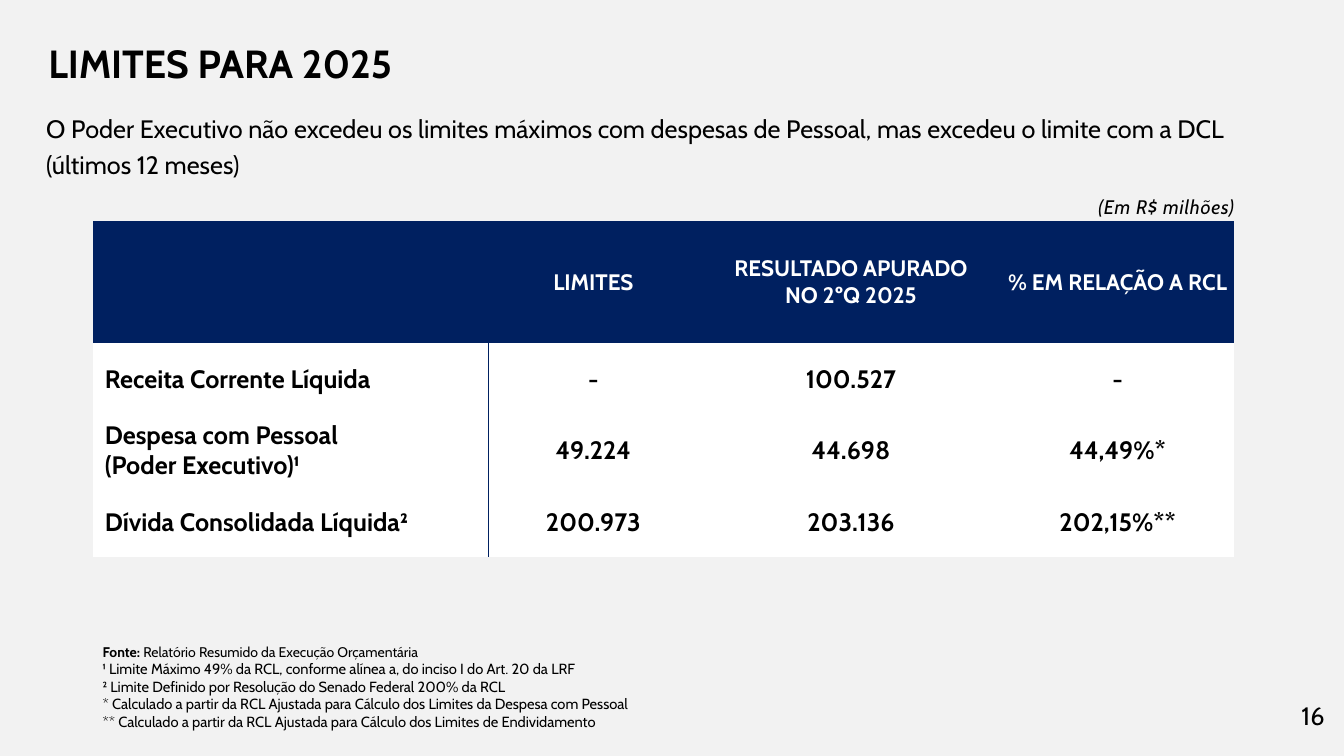
from pptx import Presentation, util as u
from pptx.dml.color import RGBColor
from pptx.enum import shapes, text
from pptx.oxml import parse_xml
from pptx.oxml.ns import nsdecls, qn

FONT = "Cabin"
BLACK, WHITE, NAVY, GREY = "000000", "FFFFFF", "002060", "F2F2F2"
LEFT, MID, RIGHT = text.PP_ALIGN.LEFT, text.PP_ALIGN.CENTER, text.PP_ALIGN.RIGHT
PLAIN = "{2D5ABB26-0587-4C30-8999-92F81FD0307C}"

COLS = [390, 213, 298, 231]
ROWS = [121, 71, 71, 71]
DATA = [
    ["", "LIMITES", "RESULTADO APURADO\nNO 2ºQ 2025", "% EM RELAÇÃO A RCL"],
    ["Receita Corrente Líquida", "-", "100.527", "-"],
    ["Despesa com Pessoal\n(Poder Executivo)¹", "49.224", "44.698", "44,49%*"],
    ["Dívida Consolidada Líquida²", "200.973", "203.136", "202,15%**"],
]
NOTES = [
    "¹ Limite Máximo 49% da RCL, conforme alínea a, do inciso I do Art. 20 da LRF",
    "² Limite Definido por Resolução do Senado Federal 200% da RCL",
    "* Calculado a partir da RCL Ajustada para Cálculo dos Limites da Despesa com Pessoal",
    "** Calculado a partir da RCL Ajustada para Cálculo dos Limites de Endividamento",
]


def px(n):
    """Turn px, 100 to the inch, into EMU."""
    return u.Emu(n * 9144)


def color(code):
    """Turn a hex string into a colour."""
    return RGBColor.from_string(code)


def style(para, size, tint=BLACK, bold=None, align=LEFT, lead=None):
    """Format one paragraph."""
    para.alignment = align
    para.line_spacing = lead
    font = para.font
    font.name, font.size, font.bold = FONT, u.Pt(size), bold
    font.color.rgb = color(tint)


def label(slide, box, words, size, anchor=text.MSO_ANCHOR.TOP, wrap=True, **look):
    """Add a text box and return its frame."""
    frame = slide.shapes.add_textbox(*map(px, box)).text_frame
    frame.word_wrap = wrap
    frame.vertical_anchor = anchor
    frame.text = words
    for para in frame.paragraphs:
        style(para, size, **look)
    return frame


def header(slide, box):
    """Place the title and the summary below it."""
    x, y, w, h = box
    title = slide.shapes.title
    title.left, title.top, title.width, title.height = map(px, (x + 2, y, 785, 79))
    frame = title.text_frame
    frame.text = "LIMITES PARA 2025"
    frame.vertical_anchor = text.MSO_ANCHOR.MIDDLE
    style(frame.paragraphs[0], 28, bold=True, lead=0.9)
    label(slide, (x, y + 87, w, h - 87),
          "O Poder Executivo não excedeu os limites máximos com despesas de "
          "Pessoal, mas excedeu o limite com a DCL (últimos 12 meses)",
          18, text.MSO_ANCHOR.MIDDLE, lead=1.2)


def limits(slide, box):
    """Place the table of limits, its unit and its dividing line."""
    x, y, w, h = box
    grid = slide.shapes.add_table(len(ROWS), len(COLS), *map(px, box)).table
    grid._tbl.tblPr.find(qn("a:tableStyleId")).text = PLAIN
    for col, size in zip(grid.columns, COLS):
        col.width = px(size)
    for row, size in zip(grid.rows, ROWS):
        row.height = px(size)
    for r, line in enumerate(DATA):
        for c, words in enumerate(line):
            cell = grid.cell(r, c)
            cell.fill.solid()
            cell.fill.fore_color.rgb = color(WHITE if r else NAVY)
            cell.vertical_anchor = text.MSO_ANCHOR.MIDDLE
            cell.margin_left = px(1 if c else 12)
            cell.margin_right = cell.margin_top = px(1)
            cell.margin_bottom = 0
            cell.text = words
            for para in cell.text_frame.paragraphs:
                style(para, 18 if r else 16, BLACK if r else WHITE, True,
                      MID if c else LEFT)
    unit = label(slide, (x + w - 199, y - 35, 209, 42), "(Em R$ milhões)",
                 14, align=RIGHT, lead=1.2)
    unit.paragraphs[0].font.italic = True
    unit.paragraphs[0].runs[0]._r.get_or_add_rPr().set("spc", "50")
    edge = x + COLS[0] + 2
    rule = slide.shapes.add_connector(
        shapes.MSO_CONNECTOR.STRAIGHT,
        *map(px, (edge, y + ROWS[0] - 8, edge, y + h)))
    rule.line.color.rgb = color(NAVY)
    rule.line.width = u.Pt(0.5)
    rule._element.spPr.append(parse_xml(f"<a:effectLst {nsdecls('a')}/>"))


def notes(slide, box):
    """Place the source and the footnotes."""
    frame = label(slide, box, "\n".join(["", *NOTES]), 10.5)
    first = frame.paragraphs[0]
    style(first, 10)
    first.add_run().text = "Fonte: "
    first.runs[0].font.bold = True
    first.add_run().text = "Relatório Resumido da Execução Orçamentária"


def main():
    """Build the slide and save it."""
    deck = Presentation()
    deck.slide_width, deck.slide_height = px(1333), px(750)
    slide = deck.slides.add_slide(deck.slide_layouts[5])
    slide.background.fill.solid()
    slide.background.fill.fore_color.rgb = color(GREY)
    header(slide, (36, 26, 1260, 146))
    limits(slide, (92, 219, sum(COLS), sum(ROWS)))
    notes(slide, (92, 633, 774, 98))
    label(slide, (1281, 690, 48, 40), "16", 18, wrap=False)
    deck.save("out.pptx")


if __name__ == "__main__":
    main()
